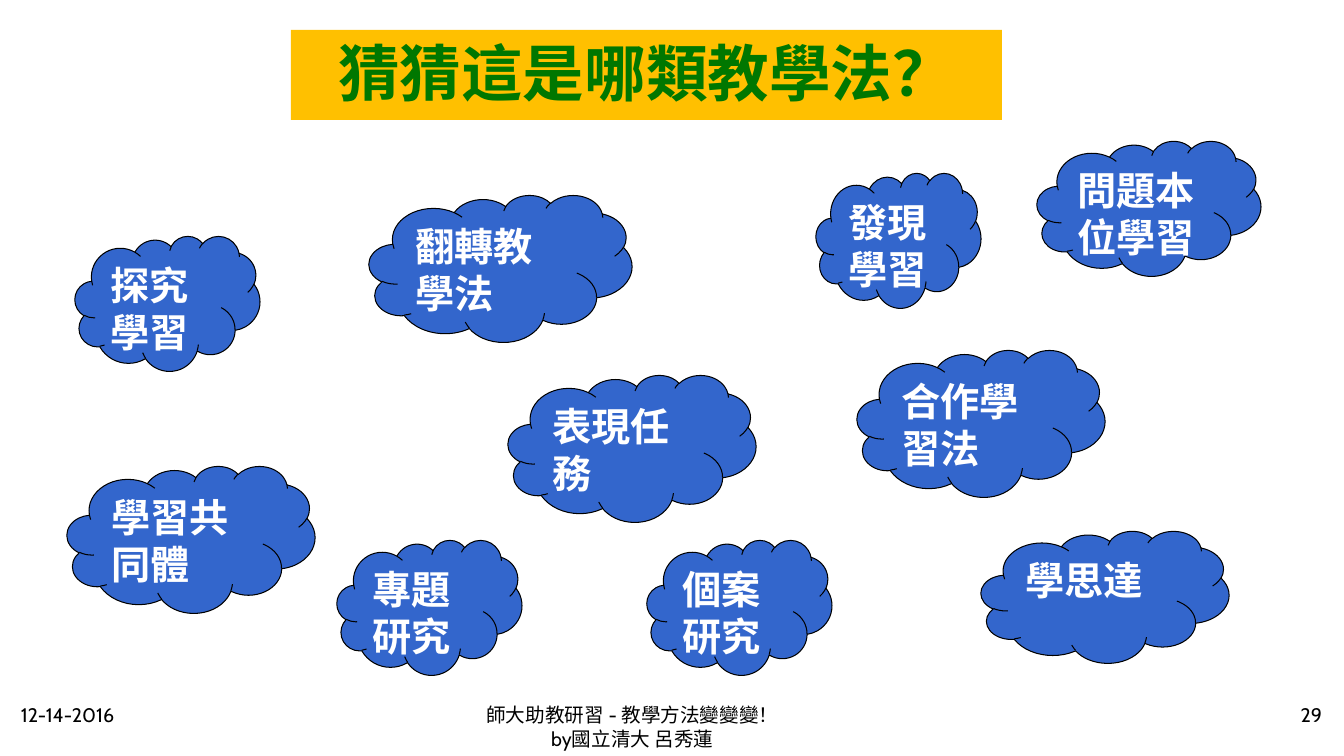
import pptx
import pptx.util
from pptx.dml.color import RGBColor
from pptx.enum.shapes import MSO_SHAPE
from pptx.enum.text import MSO_ANCHOR, PP_ALIGN

EMU_PER_PX = 914400 / 100.8
FONT = "Cabin"
COLORS = {
    "cloud": "3366CC", "outline": "000000", "cloud_text": "FFFFFF",
    "banner": "FFC000", "title": "007700", "footer": "000000",
}
FORMATS = {
    "cloud": {"size": 28, "bold": True, "color": "cloud_text", "align": PP_ALIGN.LEFT},
    "title": {"size": 44, "bold": True, "color": "title", "align": PP_ALIGN.CENTER},
    "footer": {"size": 14, "bold": False, "color": "footer", "align": PP_ALIGN.LEFT},
}

TITLE = ("猜猜這是哪類教學法？", (291, 30, 711, 90))
CLOUDS = [
    ("翻轉教學法", (369, 195, 263, 147)),
    ("學習共同體", (67, 466, 248, 147)),
    ("合作學習法", (857, 350, 248, 147)),
    ("學思達", (981, 531, 248, 132)),
    ("發現學習", (816, 173, 165, 135)),
    ("個案研究", (647, 540, 185, 135)),
    ("專題研究", (337, 540, 185, 135)),
    ("探究學習", (75, 236, 185, 135)),
    ("問題本位學習", (1037, 141, 224, 135)),
    ("表現任務", (508, 375, 248, 147)),
]
FOOTERS = [
    (["12-14-2016"], (11, 698, 280, 50), PP_ALIGN.LEFT),
    (["師大助教研習 - 教學方法變變變！", "by國立清大 呂秀蓮"], (460, 698, 425, 50), PP_ALIGN.CENTER),
    (["29"], (1052, 698, 280, 50), PP_ALIGN.RIGHT),
]
FIRST_LINE_RIGHT_MARGIN = 80


def px(length):
    return round(length * EMU_PER_PX)


def color(name):
    return RGBColor.from_string(COLORS[name])


def write(shape, lines, style, align=None):
    """Fill a shape with one paragraph per line, anchored at the top."""
    style = FORMATS[style]
    frame = shape.text_frame
    frame.word_wrap = True
    frame.vertical_anchor = MSO_ANCHOR.TOP
    frame.text = "\n".join(lines)
    values = {"name": FONT, "size": pptx.util.Pt(style["size"]), "bold": style["bold"]}
    for paragraph in frame.paragraphs:
        paragraph.alignment = style["align"] if align is None else align
        for run in paragraph.runs:
            for name, value in values.items():
                setattr(run.font, name, value)
            run.font.color.rgb = color(style["color"])


def add_filled(slide, kind, box, fill):
    shape = slide.shapes.add_shape(kind, *map(px, box))
    shape.shadow.inherit = False
    shape.fill.solid()
    shape.fill.fore_color.rgb = color(fill)
    return shape


def main():
    presentation = pptx.Presentation()
    presentation.slide_width, presentation.slide_height = px(1344), px(756)
    slide = presentation.slides.add_slide(presentation.slide_layouts[6])

    for lines, box, align in FOOTERS:
        footer = slide.shapes.add_textbox(*map(px, box))
        write(footer, lines, "footer", align)
        if len(lines) > 1:
            properties = footer.text_frame.paragraphs[0]._p.get_or_add_pPr()
            properties.set("marR", str(px(FIRST_LINE_RIGHT_MARGIN)))

    for label, box in CLOUDS:
        cloud = add_filled(slide, MSO_SHAPE.CLOUD, box, "cloud")
        cloud.line.color.rgb = color("outline")
        cloud.line.width = pptx.util.Pt(0.75)
        write(cloud, [label], "cloud")

    text, box = TITLE
    banner = add_filled(slide, MSO_SHAPE.RECTANGLE, box, "banner")
    banner.line.fill.background()
    write(banner, [text], "title")

    presentation.save("out.pptx")


if __name__ == "__main__":
    main()
